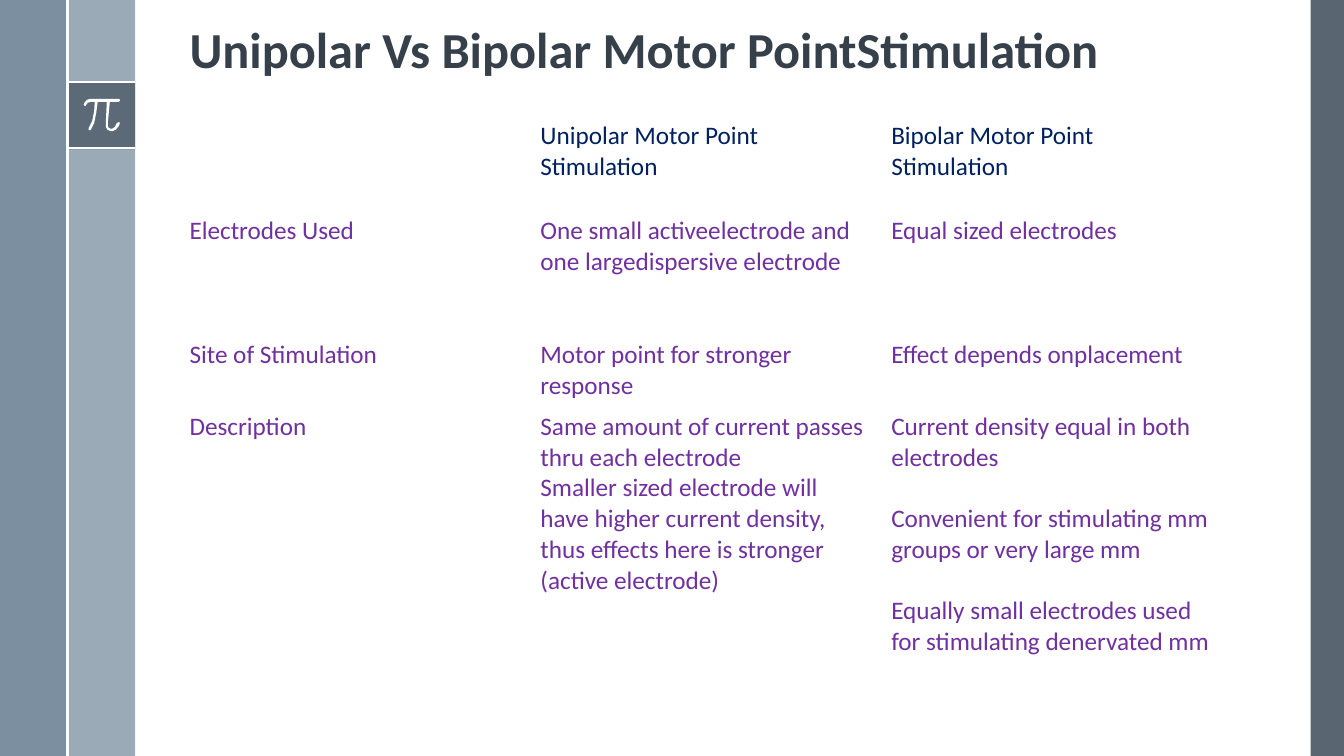
from pptx import Presentation
from pptx.dml.color import RGBColor
from pptx.enum.shapes import MSO_CONNECTOR, MSO_SHAPE
from pptx.enum.text import MSO_ANCHOR, MSO_AUTO_SIZE, PP_ALIGN
from pptx.oxml.ns import qn
from pptx.util import Inches, Pt
from lxml.etree import SubElement

SLATE, STEEL, MIST, WHITE = "475562", "6A8093", "9BAAB7", "FFFFFF"
INK, NAVY, PURPLE = "35404A", "002060", "7030A0"

PI_OUTLINE = [
    (1.18, 0.98), (0.9, 0.98), (0.865, 0.99), (0.84, 1.015), (0.83, 1.04),
    (0.84, 1.05), (0.85, 1.05), (0.87, 1.02), (0.9, 1.01), (0.94, 1.01),
    (0.935, 1.1), (0.915, 1.2), (0.88, 1.27), (0.88, 1.29), (0.9, 1.29),
    (0.935, 1.22), (0.955, 1.12), (0.97, 1.01), (1.06, 1.01), (1.05, 1.22),
    (1.05, 1.26), (1.07, 1.29), (1.1, 1.3), (1.12, 1.3), (1.15, 1.285),
    (1.18, 1.25), (1.19, 1.22), (1.18, 1.21), (1.16, 1.22), (1.14, 1.26),
    (1.11, 1.28), (1.08, 1.27), (1.07, 1.25), (1.07, 1.22), (1.09, 1.01),
    (1.18, 1.01), (1.19, 1.0), (1.19, 0.99),
]

ROWS = [
    (0.94, [[], ["Unipolar Motor Point Stimulation"],
            ["Bipolar Motor Point", "Stimulation"]]),
    (1.23, [["Electrodes Used"],
            ["One small activeelectrode and one largedispersive electrode"],
            ["Equal sized electrodes"]]),
    (0.66, [["Site of Stimulation"], ["Motor point for stronger response"],
            ["Effect depends onplacement"]]),
    (2.92, [["Description"],
            ["Same amount of current passes thru each electrode",
             "Smaller sized electrode will have higher current density, "
             "thus effects here is stronger (active electrode)"],
            ["Current density equal in both electrodes",
             "Convenient for stimulating mm groups or very large mm",
             "Equally small electrodes used for stimulating denervated mm"]]),
]


def rgb(value):
    return RGBColor.from_string(value)


class Deck:
    font = "Calibri"

    def __init__(self):
        self.prs = Presentation()
        self.prs.slide_width, self.prs.slide_height = Inches(13.33), Inches(7.5)
        self.s = self.prs.slides.add_slide(self.prs.slide_layouts[5])

    def style(self, p, size, color, bold=False):
        for r in p.runs:
            r.font.name, r.font.size, r.font.bold = self.font, Pt(size), bold
            r.font.color.rgb = rgb(color)

    def paint(self, sp, color, alpha=100):
        sp.shadow.inherit = False
        sp.fill.solid()
        sp.fill.fore_color.rgb = rgb(color)
        sp.line.fill.background()
        if alpha < 100:
            clr = sp.fill._xPr.find(qn("a:solidFill"))[0]
            SubElement(clr, qn("a:alpha")).set("val", str(alpha * 1000))

    def bar(self, x, y, w, h, color, alpha=100):
        sp = self.s.shapes.add_shape(
            MSO_SHAPE.RECTANGLE, Inches(x), Inches(y), Inches(w), Inches(h))
        self.paint(sp, color, alpha)

    def line(self, x1, y1, x2, y2):
        c = self.s.shapes.add_connector(
            MSO_CONNECTOR.STRAIGHT, Inches(x1), Inches(y1), Inches(x2), Inches(y2))
        c.line.color.rgb, c.line.width = rgb(WHITE), Pt(1.5)
        SubElement(c._element.spPr, qn("a:effectLst"))

    def outline(self, points, color):
        pts = [(Inches(x), Inches(y)) for x, y in points]
        fb = self.s.shapes.build_freeform(*pts[0])
        fb.add_line_segments(pts[1:], close=True)
        self.paint(fb.convert_to_shape(), color)

    def title(self, text, x, y, w, h):
        sp = self.s.shapes.title
        sp.left, sp.top, sp.width, sp.height = Inches(x), Inches(y), Inches(w), Inches(h)
        tf = sp.text_frame
        tf.text = text
        tf.word_wrap, tf.auto_size = True, MSO_AUTO_SIZE.NONE
        tf.vertical_anchor = MSO_ANCHOR.BOTTOM
        p = tf.paragraphs[0]
        p.alignment, p.line_spacing = PP_ALIGN.LEFT, 0.9
        self.style(p, 36, INK, True)

    def table(self, rows, x, y, col_width):
        cols = len(rows[0][1])
        height = sum(h for h, _ in rows)
        tbl = self.s.shapes.add_table(
            len(rows), cols, Inches(x), Inches(y),
            Inches(col_width * cols), Inches(height)).table
        tbl.first_row = tbl.horz_banding = False
        for col in tbl.columns:
            col.width = Inches(col_width)
        for i, (h, texts) in enumerate(rows):
            tbl.rows[i].height = Inches(h)
            for j, lines in enumerate(texts):
                cell = tbl.cell(i, j)
                cell.fill.background()
                cell.text_frame.text = "\n".join(lines)
                for k, p in enumerate(cell.text_frame.paragraphs):
                    self.style(p, 18, PURPLE if i else NAVY)
                    if k and len(lines) == 3:
                        p.space_before = Pt(22)


def main():
    deck = Deck()
    deck.bar(13, 0, 0.33, 7.5, SLATE, 90)
    deck.bar(0.67, 0, 0.67, 7.5, MIST)
    deck.bar(0, 0, 0.67, 7.5, STEEL, 88)
    deck.bar(0.67, 0.81, 0.67, 0.67, SLATE, 75)
    for y in (0.81, 1.47):
        deck.line(0.67, y, 1.34, y)
    deck.outline(PI_OUTLINE, WHITE)
    deck.line(0.67, 0, 0.67, 7.5)
    deck.title("Unipolar Vs Bipolar Motor PointStimulation", 1.78, 0, 10.7, 0.84)
    deck.table(ROWS, 1.78, 1.15, 3.48)
    deck.prs.save("out.pptx")


if __name__ == "__main__":
    main()
